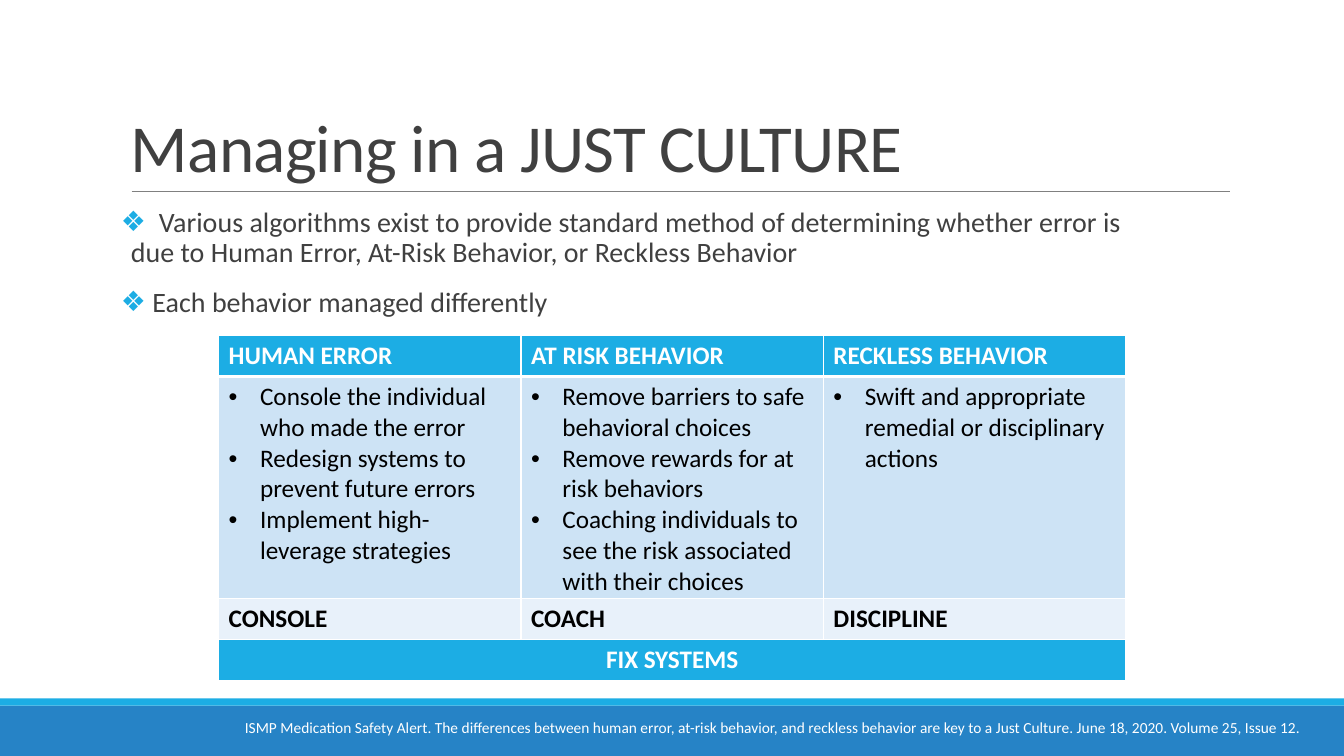
from lxml.etree import SubElement as Sub
from pptx import Presentation
from pptx.dml.color import RGBColor as RGB
from pptx.enum.shapes import MSO_CONNECTOR as Link, MSO_SHAPE as Kind
from pptx.enum.text import MSO_ANCHOR as Anchor, MSO_AUTO_SIZE as Fit, PP_ALIGN as Align
from pptx.oxml.ns import qn
from pptx.util import Cm, Pt

HUES = {"sky": "1CADE4", "blue": "2683C6", "pale": "CDE3F5", "mist": "E8F1FA",
        "gray": "808080", "ink": "404040", "black": "000000", "white": "FFFFFF"}


def hue(name):
    return RGB.from_string(HUES[name])


class Deck:
    """Holds the style and the current slide."""
    face = "Calibri"

    def __init__(self, wide, high):
        self.prs = Presentation()
        self.prs.slide_width, self.prs.slide_height = Cm(wide), Cm(high)
        self.slide = self.prs.slides.add_slide(self.prs.slide_layouts[6])
        self.shapes = self.slide.shapes

    def band(self, x, y, w, h, color):
        box = self.shapes.add_shape(Kind.RECTANGLE, Cm(x), Cm(y), Cm(w), Cm(h))
        box.shadow.inherit = False
        box.fill.solid()
        box.fill.fore_color.rgb = hue(color)
        box.line.fill.background()

    def rule(self, x, y, end, color, width):
        line = self.shapes.add_connector(Link.STRAIGHT, Cm(x), Cm(y), Cm(end), Cm(y))
        line.line.color.rgb = hue(color)
        line.line.width = Pt(width)
        Sub(line._element.spPr, qn("a:effectLst"))

    def bullet(self, para, mark, indent, color=None):
        props = para._p.get_or_add_pPr()
        props.set("marL", str(Cm(indent)))
        props.set("indent", str(-Cm(indent)))
        if color:
            Sub(Sub(props, qn("a:buClr")), qn("a:srgbClr"), val=HUES[color])
        Sub(props, qn("a:buFont"), typeface="Arial")
        Sub(props, qn("a:buChar"), char=mark)

    def lay(self, frame, lines, size, color, bold=False, mark=None, gap=None, **form):
        """Fill a frame: mark holds bullet values, gap the space before later lines."""
        for i, line in enumerate(lines):
            para = frame.paragraphs[0] if i == 0 else frame.add_paragraph()
            if mark:
                self.bullet(para, *mark)
            if gap and i:
                para.space_before = Pt(gap)
            for key, value in form.items():
                setattr(para, key, value)
            run = para.add_run()
            run.text = line
            for key, value in {"name": self.face, "size": Pt(size), "bold": bold}.items():
                setattr(run.font, key, value)
            run.font.color.rgb = hue(color)

    def text(self, x, y, w, h, lines, frame=None, **style):
        box = self.shapes.add_textbox(Cm(x), Cm(y), Cm(w), Cm(h)).text_frame
        for key, value in {"word_wrap": True, **(frame or {})}.items():
            setattr(box, key, value)
        self.lay(box, lines, **style)
        return box

    def cell(self, cell, lines, fill, edges, **style):
        props = cell._tc.get_or_add_tcPr()
        for side, width in zip("LRTB", edges):
            line = Sub(props, qn(f"a:ln{side}"), w=str(Pt(width)))
            Sub(Sub(line, qn("a:solidFill")), qn("a:srgbClr"), val=HUES["white"])
        cell.fill.solid()
        cell.fill.fore_color.rgb = hue(fill)
        self.lay(cell.text_frame, lines, **style)

    def table(self, x, y, width, highs, rows):
        """Draw rows of (format, cells); a row with one cell spans all columns."""
        cols = len(rows[0][1])
        grid = self.shapes.add_table(len(rows), cols, Cm(x), Cm(y),
                                     Cm(width * cols), Cm(sum(highs))).table
        for col in grid.columns:
            col.width = Cm(width)
        for r, (style, cells) in enumerate(rows):
            grid.rows[r].height = Cm(highs[r])
            if len(cells) == 1:
                grid.cell(r, 0).merge(grid.cell(r, cols - 1))
            edges = (1, 1, 3 if r == 1 else 1, 3 if r == 0 else 1)
            for c, lines in enumerate(cells):
                self.cell(grid.cell(r, c), lines, edges=edges, size=18, **style)


def main():
    deck = Deck(33.87, 19.05)
    deck.band(0, 17.78, 33.87, 1.27, "blue")
    deck.band(0, 17.6, 33.87, 0.18, "sky")
    deck.rule(3.32, 4.83, 31, "gray", 0.5)

    title = deck.text(3.05, 0.8, 27.94, 4.03, ["Managing in a JUST CULTURE"],
                      frame={"vertical_anchor": Anchor.BOTTOM},
                      size=48, color="ink", line_spacing=0.85)
    title.paragraphs[0].runs[0].font._element.set("spc", "-50")

    deck.text(3.05, 5.13, 27.94, 11.18, [
        "  Various algorithms exist to provide standard method of determining whether "
        "error is due to Human Error, At-Risk Behavior, or Reckless Behavior",
        " Each behavior managed differently"],
        frame={"margin_left": 0, "margin_right": Cm(2.2)}, size=20, color="ink",
        mark=("❖", 0.25, "sky"), gap=12, line_spacing=0.9, space_after=Pt(2))

    deck.text(5.92, 17.98, 27.94, 0.74, [
        "ISMP Medication Safety Alert. The differences between human error, at-risk "
        "behavior, and reckless behavior are key to a Just Culture. June 18, 2020. "
        "Volume 25, Issue 12."],
        frame={"auto_size": Fit.SHAPE_TO_FIT_TEXT}, size=11, color="white")

    head = {"fill": "sky", "color": "white", "bold": True}
    deck.table(5.51, 8.46, 7.62, [1.03, 5.56, 1.03, 1.03], [
        (head, [["HUMAN ERROR"], ["AT RISK BEHAVIOR"], ["RECKLESS BEHAVIOR"]]),
        ({"fill": "pale", "color": "black", "mark": ("•", 0.79)}, [
            ["Console the individual who made the error",
             "Redesign systems to prevent future errors",
             "Implement high-leverage strategies"],
            ["Remove barriers to safe behavioral choices",
             "Remove rewards for at risk behaviors",
             "Coaching individuals to see the risk associated with their choices"],
            ["Swift and appropriate remedial or disciplinary actions"]]),
        ({"fill": "mist", "color": "black", "bold": True},
         [["CONSOLE"], ["COACH"], ["DISCIPLINE"]]),
        ({**head, "alignment": Align.CENTER}, [["FIX SYSTEMS"]])])
    deck.prs.save("out.pptx")


if __name__ == "__main__":
    main()
